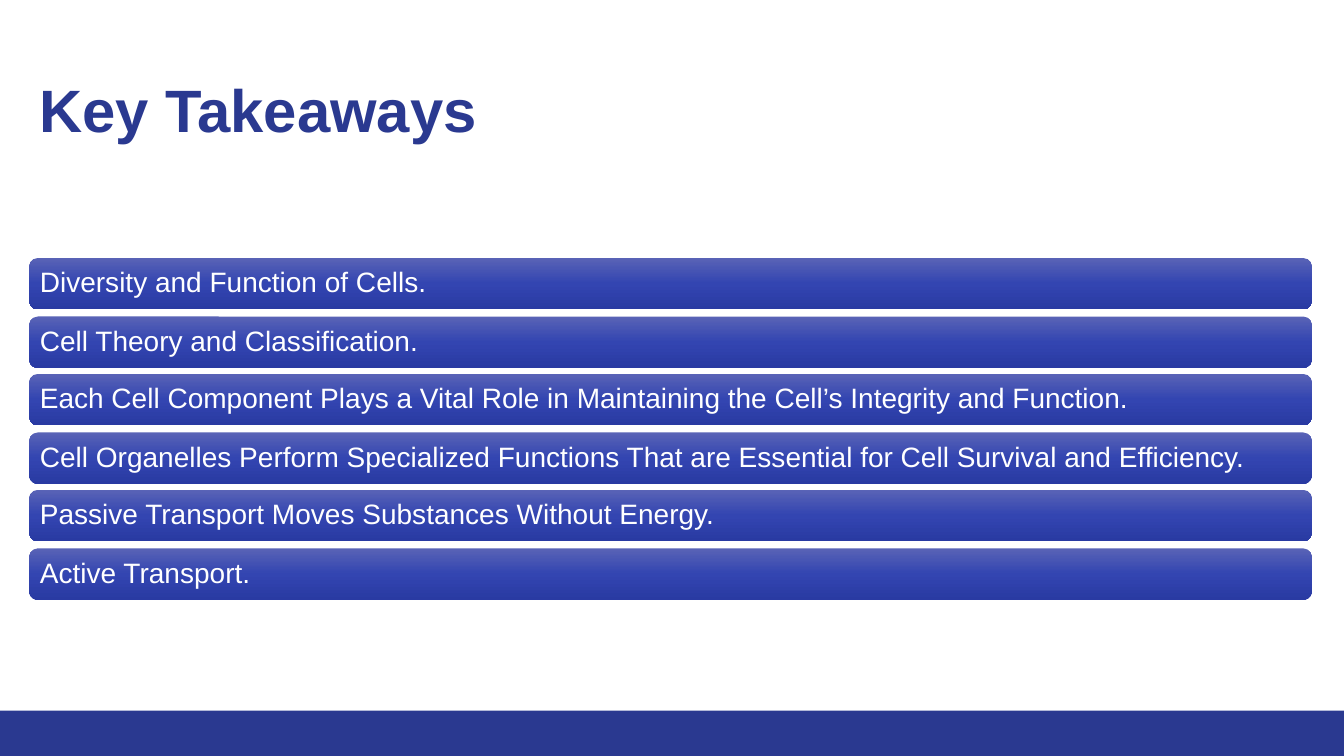
from copy import deepcopy
from dataclasses import dataclass

from pptx import Presentation
from pptx.dml.color import RGBColor as RGB
from pptx.enum.shapes import MSO_SHAPE as Shape
from pptx.enum.text import MSO_ANCHOR as Anchor, PP_ALIGN as Align
from pptx.oxml.ns import qn
from pptx.util import Inches, Pt


@dataclass(frozen=True)
class Theme:
    font: str = "Arial"
    navy: str = "2A3990"
    white: str = "FFFFFF"
    shades: tuple = ((0, "5963B6"), (0.5, "3345B1"), (1, "293AA2"))
    head: float = 42.7
    body: float = 20


THEME = Theme()
WIDTH, HEIGHT = 13.33, 7.5
LEFT, TOP, STEP = 0.29, 2.56, 0.576
POINTS = (
    "Diversity and Function of Cells.",
    "Cell Theory and Classification.",
    "Each Cell Component Plays a Vital Role in Maintaining the Cell’s Integrity and Function.",
    "Cell Organelles Perform Specialized Functions That are Essential for Cell Survival and Efficiency.",
    "Passive Transport Moves Substances Without Energy.",
    "Active Transport.",
)


def write(frame, text, size, color, bold=False):
    frame.word_wrap = True
    frame.vertical_anchor = Anchor.MIDDLE
    para = frame.paragraphs[0]
    para.text = text
    para.alignment = Align.LEFT
    para.line_spacing = 0.9
    font = para.font
    font.name, font.size, font.bold = THEME.font, Pt(size), bold
    font.color.rgb = RGB.from_string(color)


def add_box(slide, kind, *place):
    box = slide.shapes.add_shape(kind, *map(Inches, place))
    box.shadow.inherit = False
    box.line.fill.background()
    return box


def add_foot(slide):
    foot = add_box(slide, Shape.RECTANGLE, 0, 7.05, WIDTH, 0.45)
    foot.fill.solid()
    foot.fill.fore_color.rgb = RGB.from_string(THEME.navy)


def add_title(slide, text):
    place = map(Inches, (LEFT, 0.4, 12.69, 1.45))
    box = slide.shapes.add_textbox(*place)
    write(box.text_frame, text, THEME.head, THEME.navy, True)


def shade(box):
    fill = box.fill
    fill.gradient()
    fill.gradient_angle = 270
    stops = box.element.spPr.find(".//" + qn("a:gsLst"))
    stops.append(deepcopy(stops[0]))
    for stop, (spot, color) in zip(fill.gradient_stops, THEME.shades):
        stop.position = spot
        stop.color.rgb = RGB.from_string(color)


def add_bar(slide, top, text):
    bar = add_box(slide, Shape.ROUNDED_RECTANGLE, LEFT, top, 12.72, 0.51)
    shade(bar)
    frame = bar.text_frame
    frame.margin_left = frame.margin_right = Inches(0.08)
    frame.margin_top = frame.margin_bottom = Inches(0.08)
    write(frame, text, THEME.body, THEME.white)


def main():
    deck = Presentation()
    deck.slide_width, deck.slide_height = Inches(WIDTH), Inches(HEIGHT)
    slide = deck.slides.add_slide(deck.slide_layouts[6])
    add_foot(slide)
    add_title(slide, "Key Takeaways")
    for row, text in enumerate(POINTS):
        add_bar(slide, round(TOP + row * STEP, 2), text)
    deck.save("out.pptx")


if __name__ == "__main__":
    main()
